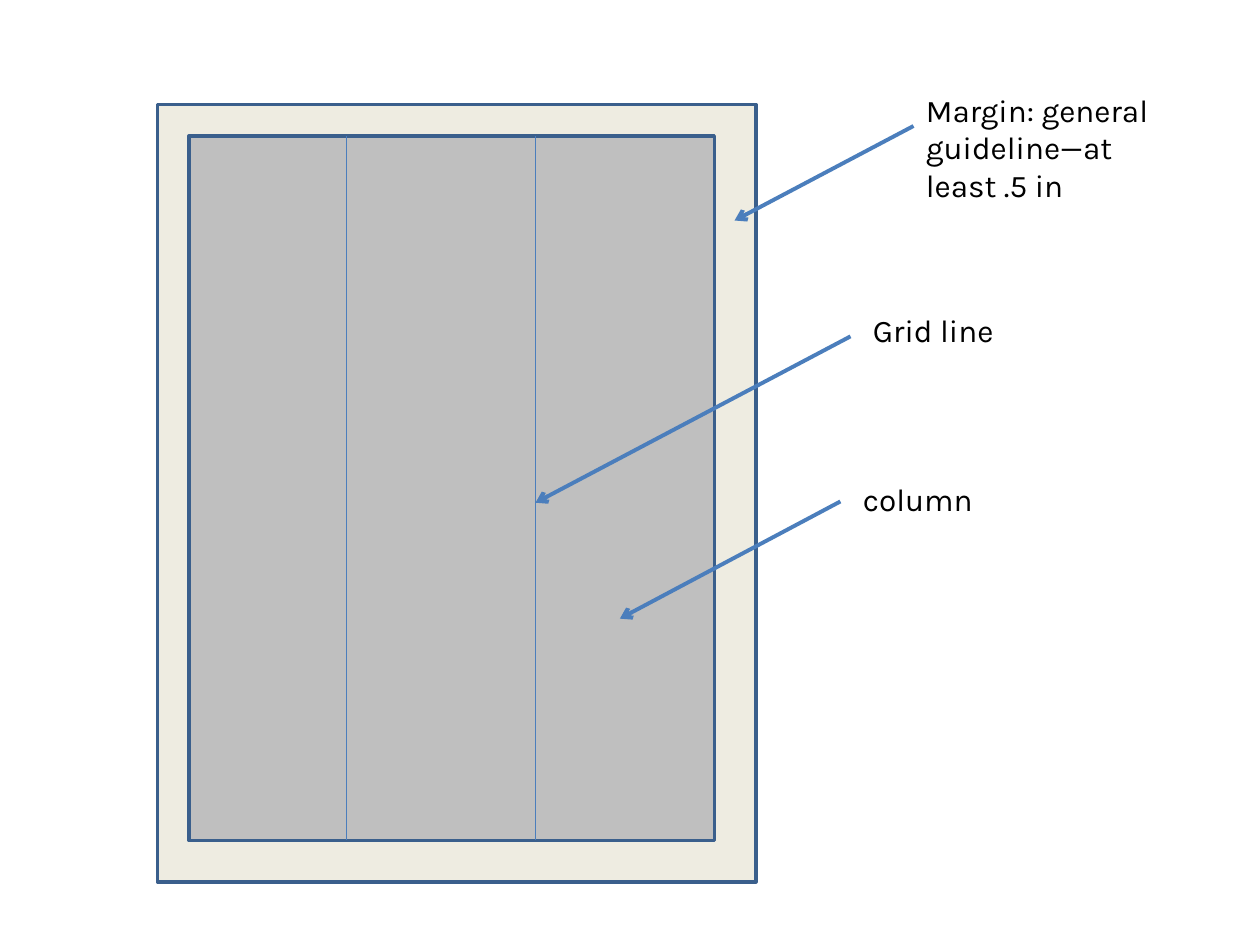
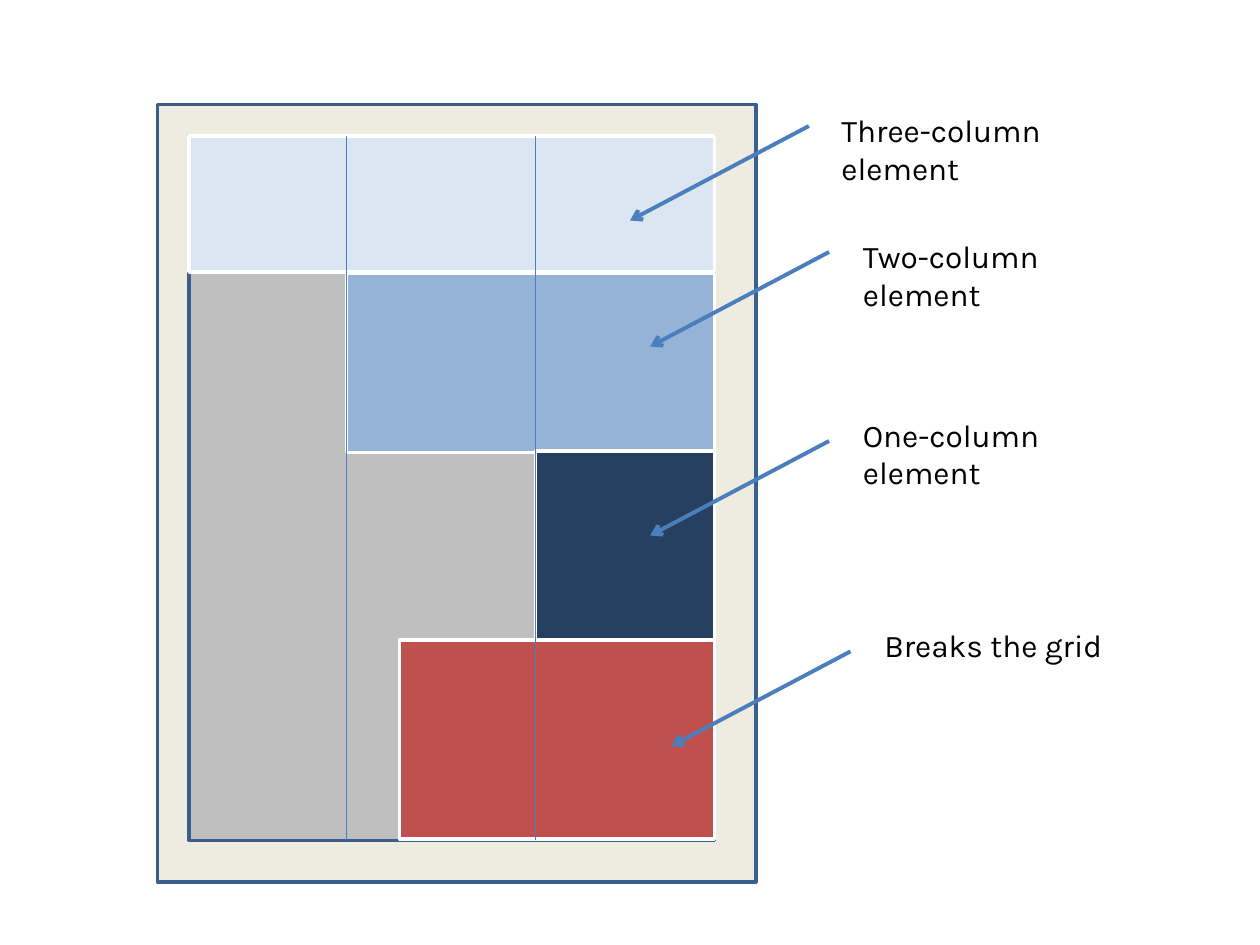
from pptx import Presentation
from pptx.dml.color import RGBColor as Rgb
from pptx.enum.shapes import MSO_CONNECTOR as Link, MSO_SHAPE as Shape
from pptx.enum.text import MSO_AUTO_SIZE as Fit
from pptx.oxml.ns import qn
from pptx.util import Inches, Pt
from lxml.etree import SubElement as sub

COLORS = {
    "paper": "EEECE1", "grid": "BFBFBF", "edge": "3A5F8C", "line": "4B7EBC",
    "white": "FFFFFF", "text": "000000", "pale": "DCE6F2", "mid": "95B3D7",
    "navy": "254061", "red": "C0504D",
}
FONT = {"name": "Karla", "size": Pt(18)}
FRAME = {"word_wrap": True, "auto_size": Fit.SHAPE_TO_FIT_TEXT}
LEFT, TOP, RIGHT, BOTTOM = 1.5, 1.08, 5.67, 6.67
GUIDES = (2.75, 4.25)


def tint(name):
    return Rgb.from_string(COLORS[name])


def apply(item, values):
    for key, value in values.items():
        setattr(item, key, value)


class Deck:
    """Draws page-grid diagrams in one shared style."""

    def __init__(self):
        self.show = Presentation()
        self.show.slide_width, self.show.slide_height = Inches(10), Inches(7.5)
        self.slide = None

    def start(self):
        self.slide = self.show.slides.add_slide(self.show.slide_layouts[6])

    def rect(self, box, fill, edge):
        shape = self.slide.shapes.add_shape(Shape.RECTANGLE, *map(Inches, box))
        shape.shadow.inherit = False
        shape.fill.solid()
        shape.fill.fore_color.rgb = tint(fill)
        shape.line.color.rgb = tint(edge)
        shape.line.width = Pt(2)

    def line(self, begin, end, width):
        link = self.slide.shapes.add_connector(
            Link.STRAIGHT, *map(Inches, (*begin, *end)))
        link.line.color.rgb = tint("line")
        link.line.width = Pt(width)
        sub(link._element.spPr, qn("a:effectLst"))
        return link

    def arrow(self, begin, end):
        link = self.line(begin, end, 2.25)
        sub(link.line._get_or_add_ln(), qn("a:tailEnd"), type="arrow")

    def label(self, text, spot, width, height=0.4):
        box = self.slide.shapes.add_textbox(*map(Inches, (*spot, width, height)))
        apply(box.text_frame, FRAME)
        run = box.text_frame.paragraphs[0].add_run()
        run.text = text
        apply(run.font, FONT)
        run.font.color.rgb = tint("text")

    def page(self, blocks=()):
        self.rect((1.25, 0.83, 4.75, 6.17), "paper", "edge")
        self.rect((LEFT, TOP, RIGHT - LEFT, BOTTOM - TOP), "grid", "edge")
        for left, top, height, fill in blocks:
            self.rect((left, top, RIGHT - left, height), fill, "white")
        for x in GUIDES:
            self.line((x, TOP), (x, BOTTOM), 0.75)


def main():
    deck = Deck()

    deck.start()
    deck.page()
    for text, spot, height, begin, end in (
        ("Margin: general guideline—at least .5 in", (7.25, 0.67), 1.01,
         (7.25, 1), (5.83, 1.75)),
        ("Grid line", (6.83, 2.42), 0.4, (6.75, 2.67), (4.25, 3.99)),
        ("column", (6.75, 3.76), 0.4, (6.67, 3.98), (4.92, 4.91)),
    ):
        deck.arrow(begin, end)
        deck.label(text, spot, 2.17, height)

    deck.start()
    deck.page((
        (LEFT, TOP, 1.08, "pale"),
        (GUIDES[0], 2.17, 1.42, "mid"),
        (GUIDES[1], 3.58, 1.58, "navy"),
        (3.17, 5.08, 1.58, "red"),
    ))
    for text, spot, (x, y) in (
        ("Three-column element", (6.58, 0.83), (6.42, 1)),
        ("Two-column element", (6.75, 1.83), (6.58, 2)),
        ("One-column element", (6.75, 3.25), (6.58, 3.5)),
        ("Breaks the grid", (6.92, 4.92), (6.75, 5.17)),
    ):
        deck.arrow((x, y), (x - 1.42, y + 0.75))
        deck.label(text, spot, 2.58)

    deck.show.save("out.pptx")


if __name__ == "__main__":
    main()
